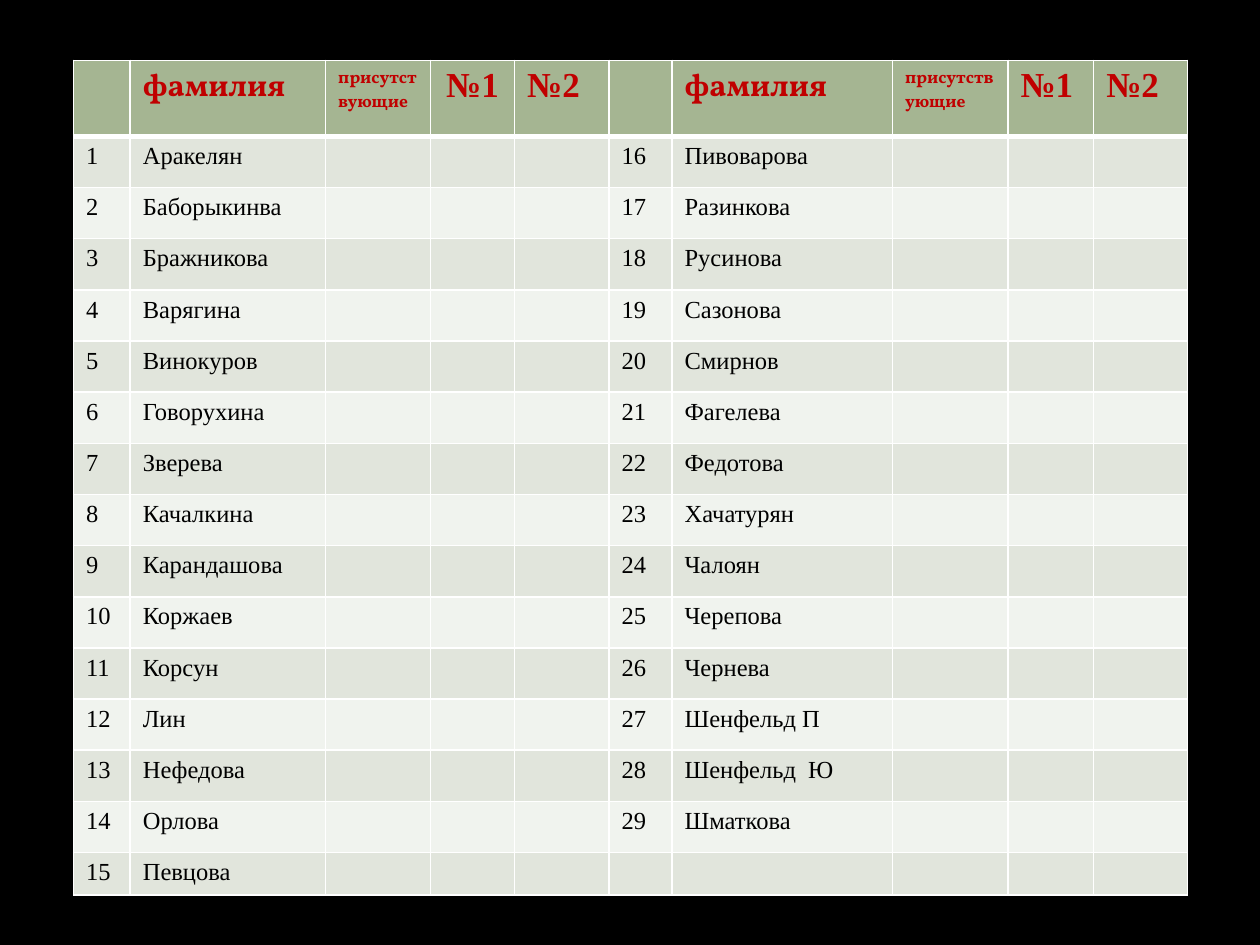
from pptx import Presentation
from pptx.dml.color import RGBColor
from pptx.enum.text import PP_ALIGN
from pptx.util import Pt
from lxml.etree import SubElement
from pptx.oxml.ns import qn

SERIF, DISPLAY = "Times New Roman", "Vollkorn"
BLACK, RED, WHITE = "000000", "C00000", "FFFFFF"
HEADER_FILL, BAND_FILLS = "A5B592", ("E1E5DC", "F0F3EE")

COLUMN_WIDTHS = [32.4, 111.6, 60, 48, 54, 36, 126, 66, 49, 53.5]
HEADER_HEIGHT, ROW_HEIGHT, LAST_HEIGHT = 43.5, 29.25, 24
HALF_COLUMNS = 5
ROWS_PER_HALF = 15

# Text, size, font for one half of the journal
HEADINGS = [
    ("", 18, DISPLAY),
    ("фамилия", 18, DISPLAY),
    ("присутствующие", 10, DISPLAY),
    ("№1", 20, SERIF),
    ("№2", 20, SERIF),
]
SURNAMES = [
    "Аракелян", "Баборыкинва", "Бражникова", "Варягина", "Винокуров",
    "Говорухина", "Зверева", "Качалкина", "Карандашова", "Коржаев",
    "Корсун", "Лин", "Нефедова", "Орлова", "Певцова",
    "Пивоварова", "Разинкова", "Русинова", "Сазонова", "Смирнов",
    "Фагелева", "Федотова", "Хачатурян", "Чалоян", "Черепова",
    "Чернева", "Шенфельд П", "Шенфельд  Ю", "Шматкова",
]


def color(hex_string):
    return RGBColor.from_string(hex_string)


def add_run(paragraph, text, size, font, hex_string, bold=False):
    run = paragraph.add_run()
    run.text = text
    run.font.size = Pt(size)
    run.font.name = font
    run.font.bold = bold
    run.font.color.rgb = color(hex_string)


def style_cell(cell, fill, top=1, bottom=1):
    # Borders come before the fill in the cell properties
    properties = cell._tc.get_or_add_tcPr()
    for side, width in (("L", 1), ("R", 1), ("T", top), ("B", bottom)):
        line = SubElement(properties, qn(f"a:ln{side}"), w=str(Pt(width)))
        solid = SubElement(line, qn("a:solidFill"))
        SubElement(solid, qn("a:srgbClr"), val=WHITE)
    cell.fill.solid()
    cell.fill.fore_color.rgb = color(fill)


def fill_cell(cell, text, size, font, hex_string, bold=False):
    paragraph = cell.text_frame.paragraphs[0]
    if text:
        add_run(paragraph, text, size, font, hex_string, bold)
    else:
        # Keeps empty cells from stretching their row
        SubElement(paragraph._p, qn("a:endParaRPr"), sz=str(size * 100))
    return paragraph


def add_journal(slide, left, top):
    heights = [HEADER_HEIGHT] + [ROW_HEIGHT] * (ROWS_PER_HALF - 1) + [LAST_HEIGHT]
    journal = slide.shapes.add_table(
        len(heights), len(COLUMN_WIDTHS), Pt(left), Pt(top),
        Pt(sum(COLUMN_WIDTHS)), Pt(sum(heights))).table
    for column, width in zip(journal.columns, COLUMN_WIDTHS):
        column.width = Pt(width)
    for row, height in zip(journal.rows, heights):
        row.height = Pt(height)

    # Header row
    for index, (text, size, font) in enumerate(HEADINGS * 2):
        cell = journal.cell(0, index)
        style_cell(cell, HEADER_FILL, bottom=3)
        heading = fill_cell(cell, text, size, font, RED, bold=True)
        if index == 3:
            heading.alignment = PP_ALIGN.CENTER

    # Numbered surnames, running down the left half and then the right
    for row in range(1, len(heights)):
        for index in range(len(COLUMN_WIDTHS)):
            half, field = divmod(index, HALF_COLUMNS)
            number = half * ROWS_PER_HALF + row
            text = ""
            if number <= len(SURNAMES) and field < 2:
                text = (str(number), SURNAMES[number - 1])[field]
            cell = journal.cell(row, index)
            style_cell(cell, BAND_FILLS[(row - 1) % 2], top=3 if row == 1 else 1)
            entry = fill_cell(cell, text, 14, SERIF, BLACK)
            if index == 0:
                indents = entry._p.get_or_add_pPr()
                indents.set("marL", str(Pt(18)))
                indents.set("indent", str(Pt(-18)))


def main():
    presentation = Presentation()
    presentation.slide_width, presentation.slide_height = Pt(720), Pt(540)
    slide = presentation.slides.add_slide(presentation.slide_layouts[6])
    slide.background.fill.solid()
    slide.background.fill.fore_color.rgb = color(BLACK)
    add_journal(slide, 42, 34.5)
    presentation.save("out.pptx")


if __name__ == "__main__":
    main()
